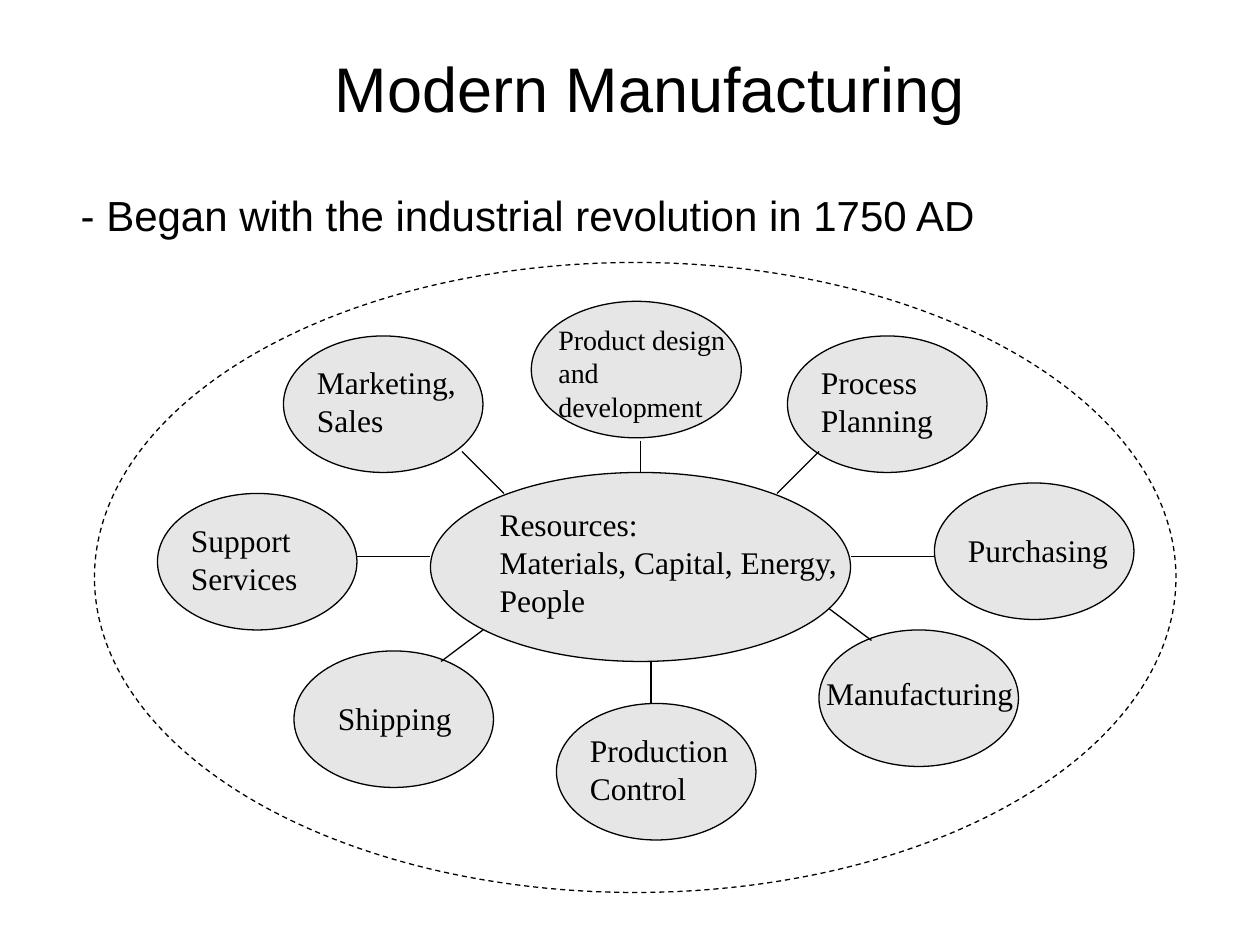
from pptx import Presentation
from pptx.dml.color import RGBColor
from pptx.enum.dml import MSO_LINE
from pptx.enum.shapes import MSO_CONNECTOR, MSO_SHAPE
from pptx.enum.text import MSO_ANCHOR, MSO_AUTO_SIZE, PP_ALIGN
from pptx.oxml.ns import qn
from pptx.util import Inches, Pt
from lxml import etree

COLS, ROWS = 120, 90
WIDTH, HEIGHT = Inches(10), Inches(7.5)
SERIF, SANS = "Times New Roman", "Arial"
BLACK, GREY = "000000", "E7E6E6"
NODE_W, NODE_H, LABEL_W = 19, 13, 16
ONE_LINE, TWO_LINES = 4.8, 8.5

NODES = [
    ("Marketing, Sales", 27, 32, 2, 2, LABEL_W, TWO_LINES),
    ("Process\nPlanning", 75, 32, 2, 2, LABEL_W, TWO_LINES),
    ("Purchasing", 89, 46, 2, 4, LABEL_W, ONE_LINE),
    ("Manufacturing", 78, 60, -0.5, 3.6, 21, ONE_LINE),
    ("Production\nControl", 53, 67, 2, 2, LABEL_W, TWO_LINES),
    ("Shipping", 28, 62, 3, 4, LABEL_W, ONE_LINE),
    ("Support Services", 15, 47, 2, 2, LABEL_W, TWO_LINES),
]
SPOKES = [
    (34, 53, 41, 53), (42, 63, 46, 60), (62, 67, 62, 63), (83, 61, 79, 58),
    (89, 53, 81, 53), (78, 43, 74, 47), (61, 42, 61, 45), (44, 43, 48, 47),
]


def color(hex_value):
    return RGBColor.from_string(hex_value)


def x(col):
    return round(WIDTH * col / COLS)


def y(row):
    return round(HEIGHT * row / ROWS)


def style_line(line):
    line.color.rgb = color(BLACK)
    line.width = Pt(0.75)


def add_ellipse(slide, col, row, w, h, fill=GREY):
    sp = slide.shapes.add_shape(MSO_SHAPE.OVAL, x(col), y(row), x(w), y(h))
    sp.shadow.inherit = False
    if fill:
        sp.fill.solid()
        sp.fill.fore_color.rgb = color(fill)
    else:
        sp.fill.background()
    style_line(sp.line)
    return sp


def add_text(slide, text, col, row, w, h, size=18, font=SERIF):
    tf = slide.shapes.add_textbox(x(col), y(row), x(w), y(h)).text_frame
    tf.word_wrap = True
    tf.auto_size = MSO_AUTO_SIZE.SHAPE_TO_FIT_TEXT
    tf.text = text
    for p in tf.paragraphs:
        for r in p.runs:
            r.font.size = Pt(size)
            r.font.name = font
            r.font.color.rgb = color(BLACK)
    return tf


def add_title(slide, text):
    tf = add_text(slide, text, 10.9, 1.3, 102, 15, 36, SANS)
    tf.auto_size = MSO_AUTO_SIZE.NONE
    tf.vertical_anchor = MSO_ANCHOR.MIDDLE
    p = tf.paragraphs[0]
    p.alignment = PP_ALIGN.CENTER
    p.line_spacing = 0.9


def add_spoke(slide, col1, row1, col2, row2):
    line = slide.shapes.add_connector(
        MSO_CONNECTOR.STRAIGHT, x(col1), y(row1), x(col2), y(row2))
    style_line(line.line)
    etree.SubElement(line._element.spPr, qn("a:effectLst"))


def add_node(slide, text, col, row, dx, dy, w, h):
    add_ellipse(slide, col, row, NODE_W, NODE_H)
    add_text(slide, text, col + dx, row + dy, w, h)


def main():
    prs = Presentation()
    prs.slide_width, prs.slide_height = WIDTH, HEIGHT
    slide = prs.slides.add_slide(prs.slide_layouts[6])

    add_title(slide, "Modern Manufacturing")
    add_text(slide, "- Began with the industrial revolution in 1750 AD",
             6.5, 17.5, 92, 6, 24, SANS)

    boundary = add_ellipse(slide, 9, 25, 103, 60, fill=None)
    boundary.line.dash_style = MSO_LINE.DASH

    add_ellipse(slide, 41, 45, 40, 18)
    add_text(slide, "Resources:\nMaterials, Capital, Energy,\nPeople",
             46.4, 47.5, 35, 15.7)
    add_ellipse(slide, 50.6, 28.7, 20, NODE_H)
    add_text(slide, "Product design and development", 52, 30.1, 20, 10.9, 16)

    for node in NODES:
        add_node(slide, *node)
    for spoke in SPOKES:
        add_spoke(slide, *spoke)

    prs.save("out.pptx")


if __name__ == "__main__":
    main()
